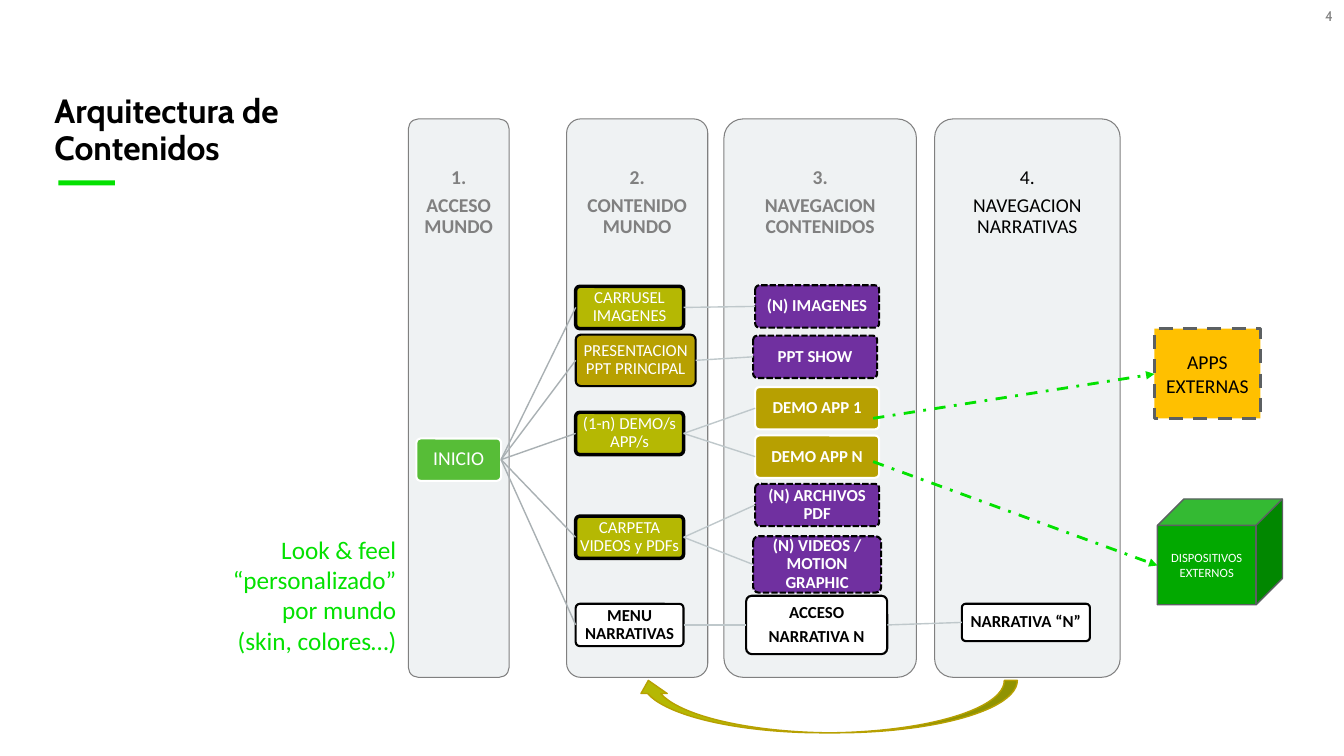
from pptx import Presentation
from pptx.dml.color import RGBColor
from pptx.enum.dml import MSO_LINE
from pptx.enum.shapes import MSO_CONNECTOR, MSO_SHAPE
from pptx.enum.text import MSO_ANCHOR, MSO_AUTO_SIZE, PP_ALIGN
from pptx.oxml.ns import qn
from pptx.util import Emu, Pt
from lxml import etree

# Scale: 100 px to the inch
PX = 9144

BLACK = RGBColor(0x00, 0x00, 0x00)
WHITE = RGBColor(0xFF, 0xFF, 0xFF)
GRAY = RGBColor(0x80, 0x80, 0x80)
PANEL = RGBColor(0xEF, 0xF2, 0xF3)
SLATE = RGBColor(0x5C, 0x60, 0x62)
START_LINK = RGBColor(0xA9, 0xB0, 0xB3)
LINK = RGBColor(0xBF, 0xC8, 0xCB)
LIME = RGBColor(0x03, 0xE1, 0x00)
GREEN = RGBColor(0x57, 0xBD, 0x37)
DARK_GREEN = RGBColor(0x02, 0xA9, 0x00)
OLIVE = RGBColor(0xB5, 0xB8, 0x03)
MUSTARD = RGBColor(0xB7, 0xA0, 0x01)
PURPLE = RGBColor(0x70, 0x30, 0xA0)
AMBER = RGBColor(0xFF, 0xC0, 0x00)

RECTANGLE = MSO_SHAPE.RECTANGLE
ROUNDED = MSO_SHAPE.ROUNDED_RECTANGLE
CUBE = MSO_SHAPE.CUBE
CURVED_ARROW = MSO_SHAPE.CURVED_DOWN_ARROW
STRAIGHT = MSO_CONNECTOR.STRAIGHT
DASH = MSO_LINE.DASH
SHORT_DASH = MSO_LINE.SQUARE_DOT
DASH_DOT = MSO_LINE.DASH_DOT
LEFT, CENTER, RIGHT = PP_ALIGN.LEFT, PP_ALIGN.CENTER, PP_ALIGN.RIGHT
TOP, MIDDLE = MSO_ANCHOR.TOP, MSO_ANCHOR.MIDDLE
NO_AUTOFIT = MSO_AUTO_SIZE.NONE

# Connection sites of a rounded rectangle
LEFT_SITE, RIGHT_SITE = 1, 3

# Left, width, heading, colour, bold
COLUMNS = [
    (927, 184, "4.\nNAVEGACION NARRATIVAS", BLACK, False),
    (718, 191, "3.\nNAVEGACION CONTENIDOS", GRAY, True),
    (562, 140, "2.\nCONTENIDO MUNDO", GRAY, True),
    (405, 100, "1.\nACCESO MUNDO", GRAY, True),
]

# Fill, line colour, line width, dash, text colour, bold
START = (GREEN, WHITE, 1.5, None, WHITE, False)
FOLDER = (OLIVE, BLACK, 2.5, None, WHITE, False)
MAIN_DECK = (MUSTARD, BLACK, 1.5, None, WHITE, False)
CONTENT = (PURPLE, BLACK, 1.5, SHORT_DASH, WHITE, True)
DEMO = (MUSTARD, WHITE, 1.5, None, WHITE, True)
NARRATIVE = (WHITE, BLACK, 1.5, None, BLACK, True)

# Key: box, text, style, parent
NODES = {
    "start": ((413, 435, 84, 42), "INICIO", START, None),
    "carousel": ((571, 284, 107, 42), "CARRUSEL IMAGENES", FOLDER, "start"),
    "images": ((749, 283, 123, 42), "(N) IMAGENES", CONTENT, "carousel"),
    "deck": ((571, 332, 119, 51), "PRESENTACION PPT PRINCIPAL", MAIN_DECK, "start"),
    "show": ((747, 333, 123, 42), "PPT SHOW", CONTENT, "deck"),
    "demos": ((571, 409, 107, 42), "(1-n) DEMO/s APP/s", FOLDER, "start"),
    "demo 1": ((749, 384, 123, 42), "DEMO APP 1", DEMO, "demos"),
    "demo n": ((749, 432, 123, 42), "DEMO APP N", DEMO, "demos"),
    "folder": ((571, 512, 107, 42), "CARPETA VIDEOS y PDFs", FOLDER, "start"),
    "files": ((749, 480, 123, 42), "(N) ARCHIVOS PDF", CONTENT, "folder"),
    "videos": ((747, 532, 127, 56), "(N) VIDEOS / MOTION GRAPHIC", CONTENT, "folder"),
    "menu": ((571, 599, 107, 42), "MENU NARRATIVAS", NARRATIVE, "start"),
    "access": ((740, 591, 140, 58), "ACCESO\nNARRATIVA N", NARRATIVE, "menu"),
    "narrative": ((954, 599, 127, 37), "NARRATIVA “N”", NARRATIVE, "access"),
}


def px(*lengths):
    return [Emu(length * PX) for length in lengths]


def write(shape, text, size, color, bold=False, align=CENTER, anchor=MIDDLE,
          font="Calibri", margin=None, spacing=None, after=None):
    frame = shape.text_frame
    frame.text = text
    frame.word_wrap = True
    frame.auto_size = NO_AUTOFIT
    frame.vertical_anchor = anchor
    if margin is not None:
        frame.margin_left = frame.margin_right = Emu(margin * PX)
        frame.margin_top = frame.margin_bottom = Emu(margin * PX)
    for paragraph in frame.paragraphs:
        paragraph.alignment = align
        if spacing:
            paragraph.line_spacing = spacing
        if after:
            paragraph.space_after = Pt(after)
        paragraph.font.name = font
        paragraph.font.size = Pt(size)
        paragraph.font.bold = bold
        paragraph.font.color.rgb = color


def add_label(slide, box, text, size, color, **options):
    label = slide.shapes.add_textbox(*px(*box))
    write(label, text, size, color, **options)
    return label


def add_figure(slide, kind, box, fill, line=None, width=1, dash=None):
    shape = slide.shapes.add_shape(kind, *px(*box))
    shape.shadow.inherit = False
    shape.fill.solid()
    shape.fill.fore_color.rgb = fill
    if line is None:
        shape.line.fill.background()
    else:
        shape.line.color.rgb = line
        shape.line.width = Pt(width)
        if dash:
            shape.line.dash_style = dash
    if kind == ROUNDED:
        shape.adjustments[0] = 0.1
    return shape


def add_column(slide, left, width, heading, color, bold):
    add_figure(slide, ROUNDED, (left, 118, width, 554), PANEL, GRAY, 0.75)
    add_label(slide, (left, 118, width, 166), heading, 14, color, bold=bold,
              margin=11, spacing=0.9, after=5)


def add_node(slide, box, text, style):
    fill, line, width, dash, color, bold = style
    node = add_figure(slide, ROUNDED, box, fill, line, width, dash)
    write(node, text, 14 if style is START else 12, color, bold=bold,
          margin=1, spacing=0.9, after=4)
    return node


def add_line(slide, ends, color, width):
    connector = slide.shapes.add_connector(STRAIGHT, *px(*ends))
    connector.line.color.rgb = color
    connector.line.width = Pt(width)
    etree.SubElement(connector._element.spPr, qn("a:effectLst"))
    return connector


def add_link(slide, parent, child, color):
    link = add_line(slide, (0, 0, 0, 0), color, 1)
    link.begin_connect(parent, RIGHT_SITE)
    link.end_connect(child, LEFT_SITE)


def add_dashed_arrow(slide, ends):
    arrow = add_line(slide, ends, LIME, 2)
    arrow.line.dash_style = DASH_DOT
    etree.SubElement(arrow.line._get_or_add_ln(), qn("a:tailEnd"), type="triangle")


def main():
    presentation = Presentation()
    presentation.slide_width, presentation.slide_height = px(1333, 750)
    slide = presentation.slides.add_slide(presentation.slide_layouts[5])

    # Title, accent bar and page number
    title = slide.shapes.title
    title.left, title.top, title.width, title.height = px(44, 89, 400, 91)
    write(title, "Arquitectura de Contenidos", 24, BLACK, bold=True, align=LEFT,
          anchor=TOP, font="Cabin", spacing=0.9)
    add_figure(slide, RECTANGLE, (58, 179, 56, 5), LIME)
    add_label(slide, (1216, 2, 116, 28), "4", 10, GRAY, align=RIGHT, font="Cabin")

    # Columns
    for column in COLUMNS:
        add_column(slide, *column)

    # Content tree
    nodes = {}
    for key, (box, text, style, parent) in NODES.items():
        nodes[key] = add_node(slide, box, text, style)
        if parent:
            color = START_LINK if parent == "start" else LINK
            add_link(slide, nodes[parent], nodes[key], color)

    # External targets
    apps = add_figure(slide, RECTANGLE, (1145, 326, 105, 89), AMBER, SLATE, 2.5, DASH)
    write(apps, "APPS\nEXTERNAS", 14, BLACK)
    devices = add_figure(slide, CUBE, (1148, 495, 124, 105), DARK_GREEN, SLATE)
    write(devices, "DISPOSITIVOS\nEXTERNOS", 9, WHITE)
    add_dashed_arrow(slide, (866, 415, 1145, 371))
    add_dashed_arrow(slide, (866, 458, 1148, 561))

    # Return arrow and side note
    back = add_figure(slide, CURVED_ARROW, (630, 675, 379, 52), OLIVE, MUSTARD)
    back.rotation = 180
    note = add_label(slide, (219, 525, 184, 131),
                     "Look & feel\n“personalizado”\npor mundo\n(skin, colores…)",
                     18, LIME, align=RIGHT, anchor=TOP)
    note.text_frame.word_wrap = False

    presentation.save("out.pptx")


if __name__ == "__main__":
    main()
